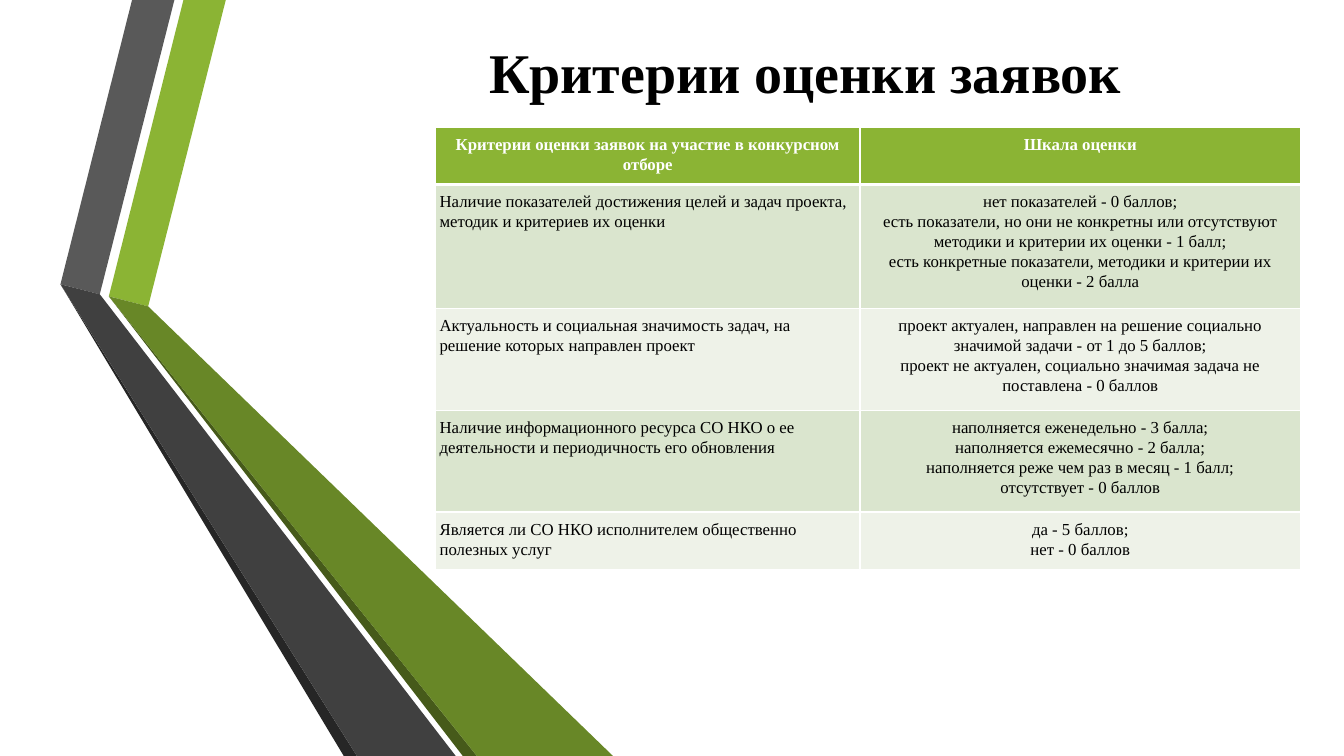
from dataclasses import dataclass

from lxml import etree
from pptx import Presentation
from pptx.dml.color import RGBColor
from pptx.enum.text import MSO_ANCHOR, MSO_AUTO_SIZE, PP_ALIGN
from pptx.oxml.ns import qn
from pptx.util import Inches, Pt

LEFT, CENTER = PP_ALIGN.LEFT, PP_ALIGN.CENTER
TOP, MIDDLE = MSO_ANCHOR.TOP, MSO_ANCHOR.MIDDLE
GROW = MSO_AUTO_SIZE.SHAPE_TO_FIT_TEXT
TITLE_ONLY = 5


@dataclass(frozen=True)
class Theme:
    """Colours, font and type sizes of the deck."""
    font: str = "Times New Roman"
    title_size: float = 40
    table_size: float = 12
    line_spacing: float = 1.07
    ink: str = "000000"
    white: str = "FFFFFF"
    green: str = "8BB434"
    green_dark: str = "688727"
    green_shadow: str = "465A1A"
    gray: str = "595959"
    gray_dark: str = "404040"
    gray_shadow: str = "262626"
    band_dark: str = "DAE5CE"
    band_light: str = "EEF2E8"


THEME = Theme()

RIBBON_FACETS = [
    (THEME.green, [(0.48, 2.94), (0.87, 3.04), (1.64, 0), (1.22, 0)]),
    (THEME.gray, [(0.39, 2.92), (1.13, 0), (0.71, 0), (0, 2.82)]),
    (THEME.gray_shadow, [(0, 2.82), (2.81, 7.5), (2.94, 7.5)]),
    (THEME.green_shadow, [(4.13, 7.5), (0.48, 2.94), (3.99, 7.5)]),
    (THEME.green_dark, [(0.48, 2.94), (4.13, 7.5), (5.48, 7.5), (0.87, 3.04)]),
    (THEME.gray_dark, [(3.92, 7.5), (0.46, 3.01), (0.39, 2.92), (0, 2.82), (2.94, 7.5)]),
]

HEADINGS = ("Критерии оценки заявок на участие в конкурсном отборе", "Шкала оценки")
CRITERIA = [
    ("Наличие показателей достижения целей и задач проекта, методик и критериев их оценки",
     ["нет показателей - 0 баллов;",
      "есть показатели, но они не конкретны или отсутствуют методики и критерии их оценки - 1 балл;",
      "есть конкретные показатели, методики и критерии их оценки - 2 балла"]),
    ("Актуальность и социальная значимость задач, на решение которых направлен проект",
     ["проект актуален, направлен на решение социально значимой задачи - от 1 до 5 баллов;",
      "проект не актуален, социально значимая задача не поставлена - 0 баллов"]),
    ("Наличие информационного ресурса СО НКО о ее деятельности и периодичность его обновления",
     ["наполняется еженедельно - 3 балла;",
      "наполняется ежемесячно - 2 балла;",
      "наполняется реже чем раз в месяц - 1 балл;",
      "отсутствует - 0 баллов"]),
    ("Является ли СО НКО исполнителем общественно полезных услуг",
     ["да - 5 баллов;", "нет - 0 баллов"]),
]
COLUMN_WIDTHS = (4.21, 4.37)
ROW_HEIGHTS = (0.57, 1.23, 1.01, 1.01, 0.57)


def write_text(frame, lines, *, size, color=THEME.ink, bold=False, align=LEFT, spacing=None):
    """Fill a text frame with one paragraph per line in the given format."""
    for index, line in enumerate(lines):
        para = frame.paragraphs[0] if index == 0 else frame.add_paragraph()
        para.alignment = align
        if spacing:
            para.line_spacing = spacing
        span = para.add_run()
        span.text = line
        span.font.name = THEME.font
        span.font.size = Pt(size)
        span.font.bold = bold
        span.font.color.rgb = RGBColor.from_string(color)


def add_ribbons(page, left, top):
    """Draw the two folded ribbons from the given corner."""
    for color, corners in RIBBON_FACETS:
        points = [(Inches(left + x), Inches(top + y)) for x, y in corners]
        builder = page.shapes.build_freeform(*points[0])
        builder.add_line_segments(points[1:], close=True)
        facet = builder.convert_to_shape()
        facet.shadow.inherit = False
        facet.fill.solid()
        facet.fill.fore_color.rgb = RGBColor.from_string(color)
        facet.line.fill.background()


def set_borders(cell, **widths):
    """Give a cell white borders, with widths in points keyed by side."""
    properties = cell._tc.get_or_add_tcPr()
    for side in "LRTB":
        line = etree.SubElement(properties, qn(f"a:ln{side}"), w=str(Pt(widths.get(side, 1))))
        fill = etree.SubElement(line, qn("a:solidFill"))
        etree.SubElement(fill, qn("a:srgbClr"), val=THEME.white)


def format_cell(cell, lines, fill, borders, **text_format):
    """Set the margins, borders, fill and text of a table cell."""
    cell.margin_left = cell.margin_right = Inches(0.04)
    cell.margin_top = cell.margin_bottom = Inches(0.07)
    cell.vertical_anchor = TOP
    set_borders(cell, **borders)
    cell.fill.solid()
    cell.fill.fore_color.rgb = RGBColor.from_string(fill)
    write_text(cell.text_frame, lines, size=THEME.table_size,
               spacing=THEME.line_spacing, **text_format)


def add_criteria_table(page, left, top):
    """Build the table of criteria and scores from the given corner."""
    frame = page.shapes.add_table(
        len(ROW_HEIGHTS), len(COLUMN_WIDTHS), Inches(left), Inches(top),
        Inches(sum(COLUMN_WIDTHS)), Inches(sum(ROW_HEIGHTS)))
    table = frame.table
    for column, width in zip(table.columns, COLUMN_WIDTHS):
        column.width = Inches(width)
    for row, height in zip(table.rows, ROW_HEIGHTS):
        row.height = Inches(height)
    for index, heading in enumerate(HEADINGS):
        format_cell(table.cell(0, index), [heading], THEME.green, {"B": 3},
                    color=THEME.white, bold=True, align=CENTER)
    for index, (criterion, scores) in enumerate(CRITERIA, start=1):
        fill = THEME.band_dark if index % 2 else THEME.band_light
        borders = {"T": 3} if index == 1 else {}
        format_cell(table.cell(index, 0), [criterion], fill, borders)
        format_cell(table.cell(index, 1), scores, fill, borders, align=CENTER)


def place_title(page, left, top, width, height):
    """Move the title placeholder into the box and write the heading."""
    title = page.shapes.title
    title.left, title.top = Inches(left), Inches(top)
    title.width, title.height = Inches(width), Inches(height)
    frame = title.text_frame
    frame.word_wrap = False
    frame.auto_size = GROW
    frame.vertical_anchor = MIDDLE
    write_text(frame, ["Критерии оценки заявок"], size=THEME.title_size, bold=True)


def build_criteria_slide(deck):
    """Add the slide with the ribbons, the title and the criteria table."""
    page = deck.slides.add_slide(deck.slide_layouts[TITLE_ONLY])
    add_ribbons(page, 0.6, 0)
    add_criteria_table(page, 4.32, 1.26)
    place_title(page, 4.75, 0.32, 6.5, 0.77)


def main():
    """Create the deck and save it."""
    deck = Presentation()
    deck.slide_width, deck.slide_height = Inches(13.33), Inches(7.5)
    build_criteria_slide(deck)
    deck.save("out.pptx")


if __name__ == "__main__":
    main()
